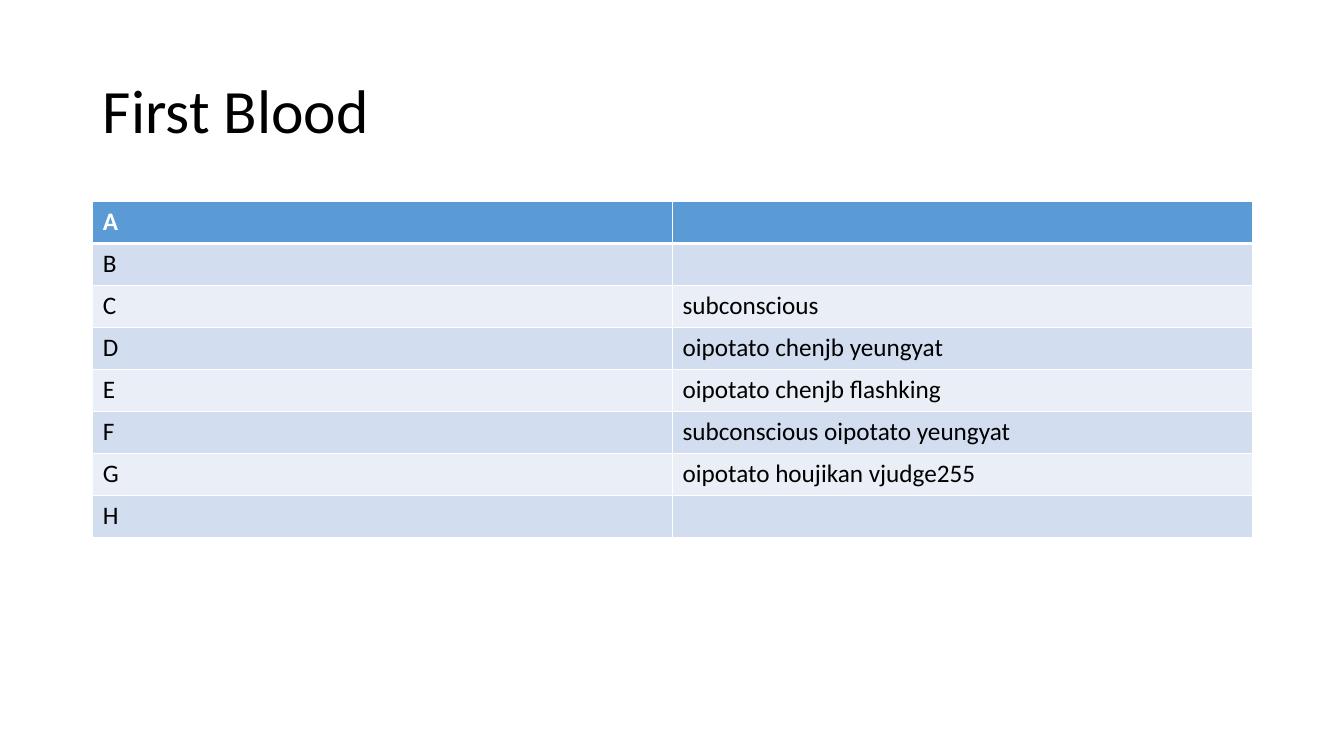
"""Build the First Blood slide: a title above a table of problems and solvers."""
import lxml.etree
import pptx
import pptx.dml.color
import pptx.enum.text
import pptx.oxml.ns
import pptx.util

Inches = pptx.util.Inches
Pt = pptx.util.Pt
qn = pptx.oxml.ns.qn


def color(value):
    return pptx.dml.color.RGBColor.from_string(value)


def add_border(cell, side, width):
    line = lxml.etree.SubElement(cell._tc.get_or_add_tcPr(), qn(f"a:ln{side}"), w=str(Pt(width)))
    fill = lxml.etree.SubElement(line, qn("a:solidFill"))
    lxml.etree.SubElement(fill, qn("a:srgbClr"), val="FFFFFF")


deck = pptx.Presentation()
deck.slide_width = Inches(13.33)
deck.slide_height = Inches(7.5)
page = deck.slides.add_slide(deck.slide_layouts[5])

title = page.shapes.title
title.left, title.top = Inches(0.92), Inches(0.4)
title.width, title.height = Inches(11.5), Inches(1.45)
title.text_frame.text = "First Blood"
title.text_frame.vertical_anchor = pptx.enum.text.MSO_ANCHOR.MIDDLE
para = title.text_frame.paragraphs[0]
para.alignment = pptx.enum.text.PP_ALIGN.LEFT
para.line_spacing = 0.9
span = para.runs[0]
span.font.name = "Calibri"
span.font.size = Pt(44)
span.font.color.rgb = color("000000")

solvers = {
    "A": "",
    "B": "",
    "C": "subconscious",
    "D": "oipotato chenjb yeungyat",
    "E": "oipotato chenjb flashking",
    "F": "subconscious oipotato yeungyat",
    "G": "oipotato houjikan vjudge255",
    "H": "",
}
table = page.shapes.add_table(
    len(solvers), 2, Inches(0.92), Inches(2), Inches(11.5), Inches(3.33)
).table

for row, entry in enumerate(solvers.items()):
    header = row == 0
    band = "5B9BD5" if header else ("EAEFF7", "D2DEEF")[row % 2]
    for column, text in enumerate(entry):
        cell = table.cell(row, column)
        cell.text_frame.text = text
        for side in "LRTB":
            thick = (header and side == "B") or (row == 1 and side == "T")
            add_border(cell, side, 3 if thick else 1)
        cell.fill.solid()
        cell.fill.fore_color.rgb = color(band)
        para = cell.text_frame.paragraphs[0]
        para.font.size = Pt(18)
        for span in para.runs:
            span.font.name = "Calibri"
            span.font.size = Pt(18)
            span.font.bold = header
            span.font.color.rgb = color("FFFFFF" if header else "000000")

deck.save("out.pptx")
